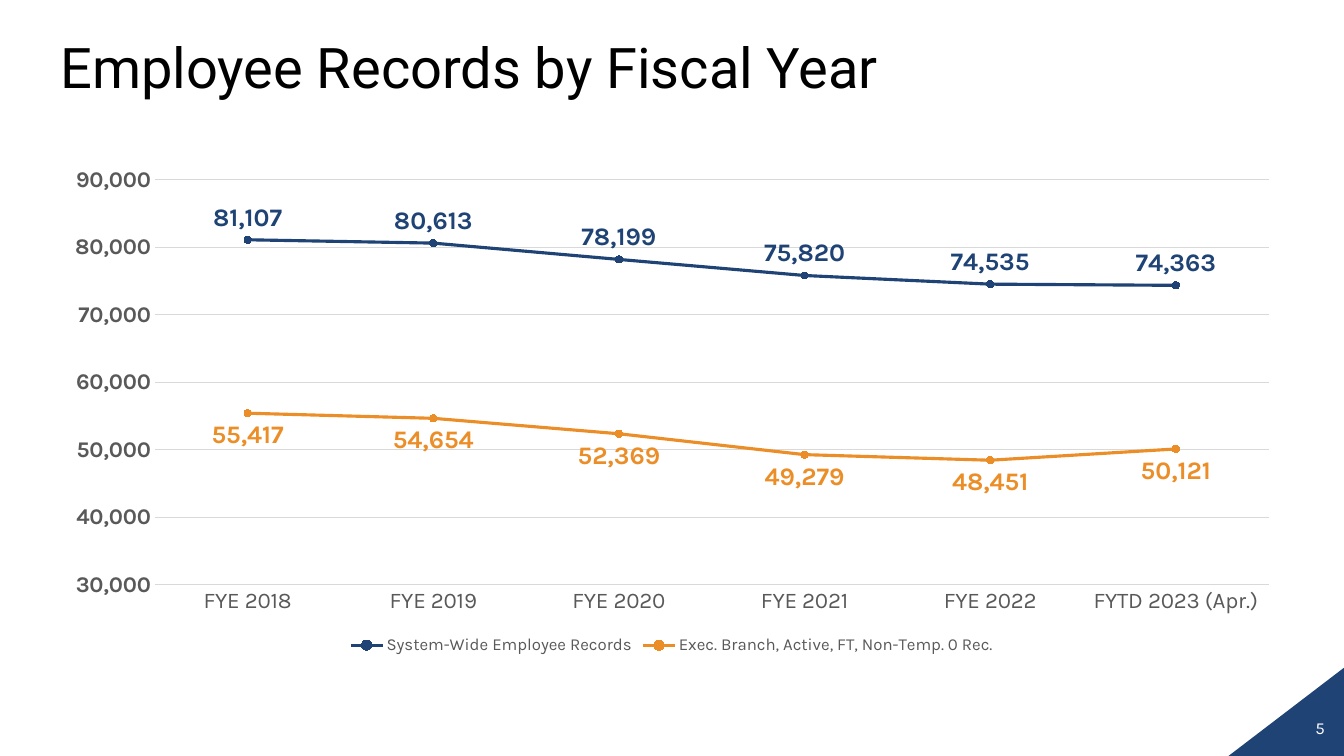
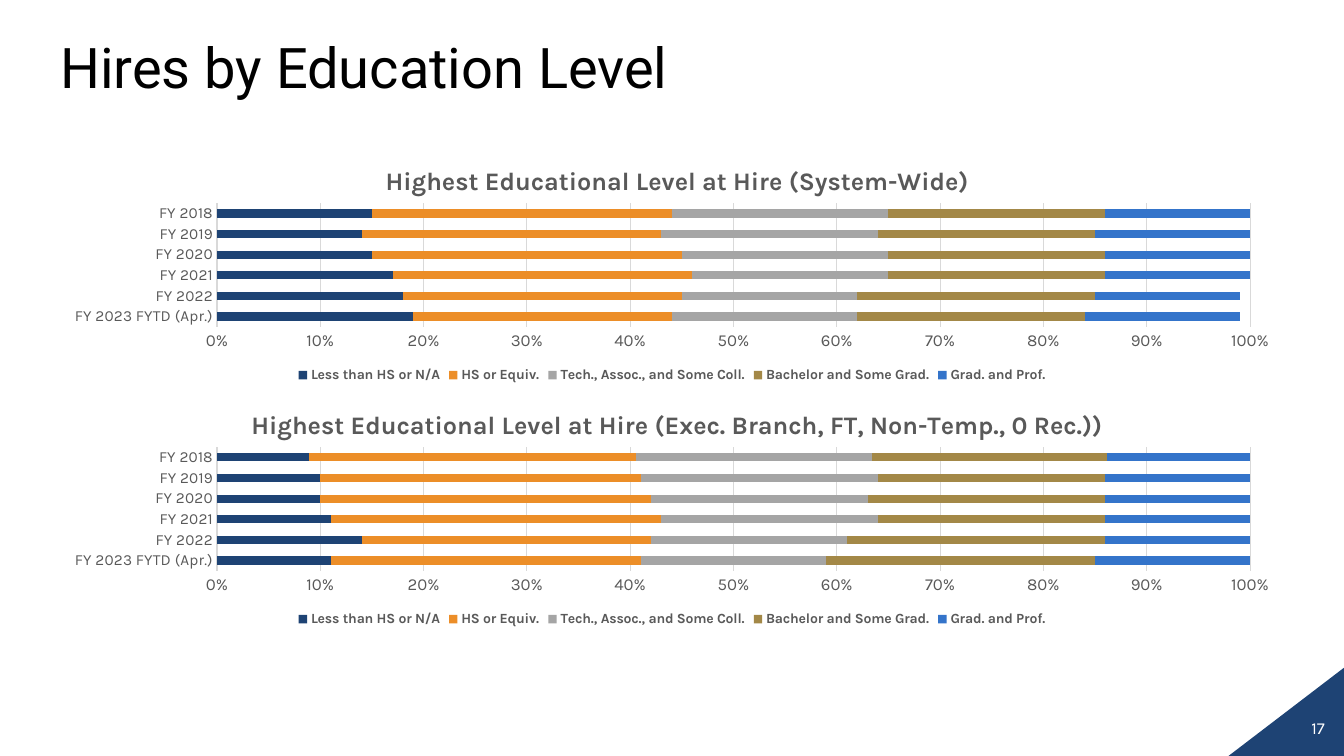
from dataclasses import dataclass
from typing import Any, Optional

from lxml import etree
from pptx import Presentation
from pptx.chart.chart import Chart
from pptx.chart.data import CategoryChartData
from pptx.dml.color import RGBColor
from pptx.enum.chart import (
    XL_CHART_TYPE, XL_LABEL_POSITION, XL_LEGEND_POSITION, XL_MARKER_STYLE, XL_TICK_MARK,
)
from pptx.enum.shapes import MSO_SHAPE
from pptx.enum.text import MSO_ANCHOR, PP_ALIGN
from pptx.oxml.ns import qn
from pptx.util import Inches, Pt

LINE, STACKED, STACKED_100 = (
    XL_CHART_TYPE.LINE_MARKERS, XL_CHART_TYPE.BAR_STACKED, XL_CHART_TYPE.BAR_STACKED_100)
ABOVE, BELOW = XL_LABEL_POSITION.ABOVE, XL_LABEL_POSITION.BELOW
LEGEND_BOTTOM, CIRCLE, NO_TICK = (
    XL_LEGEND_POSITION.BOTTOM, XL_MARKER_STYLE.CIRCLE, XL_TICK_MARK.NONE)
TRIANGLE = MSO_SHAPE.RIGHT_TRIANGLE
TOP, MIDDLE = MSO_ANCHOR.TOP, MSO_ANCHOR.MIDDLE
LEFT, RIGHT = PP_ALIGN.LEFT, PP_ALIGN.RIGHT

COLUMNS, ROWS = 160, 90
CELL = Inches(7.5) / ROWS
COLORS = {
    "navy": "1E4374", "orange": "EC8E28", "gray": "A5A5A5", "olive": "A38847",
    "blue": "3474CA", "label": "595959", "grid": "D9D9D9", "black": "000000",
    "white": "FFFFFF",
}
TITLE_FONT, BODY_FONT = "Roboto", "Karla"


@dataclass(frozen=True)
class Area:
    """A rectangle in grid columns and rows."""
    column: float
    row: float
    columns: float
    rows: float

    def lengths(self) -> list[int]:
        """Return left, top, width and height."""
        return [round(n * CELL) for n in (self.column, self.row, self.columns, self.rows)]


@dataclass(frozen=True)
class Series:
    """One named data series and its colour."""
    name: str
    color: str
    values: tuple[float, ...]
    label_position: Any = None


@dataclass(frozen=True)
class ChartStyle:
    """The format that charts of one kind share."""
    plot: tuple[float, float, float, float]
    category_size: int
    value_size: int
    legend_size: int
    number_format: str
    minimum: float
    maximum: float
    step: float
    bold_values: bool = False
    bold_legend: bool = False


@dataclass(frozen=True)
class ChartPanel:
    """A chart with its place, data and optional heading."""
    area: Area
    kind: Any
    style: ChartStyle
    categories: tuple[str, ...]
    series: tuple[Series, ...]
    heading: str = ""
    heading_at: Optional[tuple[float, float]] = None


@dataclass(frozen=True)
class Page:
    """The content of one slide."""
    title: str
    number: int
    panels: tuple[ChartPanel, ...]


TITLE_AREA = Area(6, 0.12, 148, 16.44)
CORNER_AREA = Area(146.25, 79.5, 13.75, 10.5)
NUMBER_AREA = Area(145.1, 84.84, 13.8, 5.16)
TREND_STYLE = ChartStyle((0.084, 0.045, 0.896, 0.807), 16, 16, 12, "#,##0",
                         30000, 90000, 10000, bold_values=True)
SHARE_STYLE = ChartStyle((0.134, 0.246, 0.831, 0.508), 11, 12, 10, "0%",
                         0, 1, 0.1, bold_legend=True)
HIRE_YEARS = ("FY 2023 FYTD (Apr.)", "FY 2022", "FY 2021", "FY 2020", "FY 2019", "FY 2018")
LEVELS = (
    ("Less than HS or N/A", "navy"), ("HS or Equiv.", "orange"),
    ("Tech., Assoc., and Some Coll.", "gray"), ("Bachelor and Some Grad.", "olive"),
    ("Grad. and Prof.", "blue"),
)
SYSTEM_SHARES = (
    (0.19, 0.18, 0.17, 0.15, 0.14, 0.15),
    (0.25, 0.27, 0.29, 0.3, 0.29, 0.29),
    (0.18, 0.17, 0.19, 0.2, 0.21, 0.21),
    (0.22, 0.23, 0.21, 0.21, 0.21, 0.21),
    (0.15, 0.14, 0.14, 0.14, 0.15, 0.14),
)
BRANCH_SHARES = (
    (11, 14, 11, 10, 10, 9),
    (30, 28, 32, 32, 31, 32),
    (18, 19, 21, 21, 23, 23),
    (26, 25, 22, 23, 22, 23),
    (15, 14, 14, 14, 14, 14),
)


def rgb(name: str) -> RGBColor:
    """Return a colour of the palette."""
    return RGBColor.from_string(COLORS[name])


def format_font(font: Any, *, size: float, color: str = "label", bold: bool = False,
                name: str = BODY_FONT) -> None:
    """Set typeface, size, weight and colour."""
    font.name, font.size, font.bold = name, Pt(size), bold
    font.color.rgb = rgb(color)


def format_line(line: Any, color: str, width: float) -> None:
    """Set the colour and width of a line."""
    line.color.rgb = rgb(color)
    line.width = Pt(width)


def add_text(slide: Any, area: Area, text: str, *, size: float, color: str, name: str = BODY_FONT,
             align: Any = LEFT, anchor: Any = TOP, spacing: float = 1.0) -> None:
    """Add a wrapped box with one paragraph."""
    frame = slide.shapes.add_textbox(*area.lengths()).text_frame
    frame.word_wrap = True
    frame.vertical_anchor = anchor
    para = frame.paragraphs[0]
    para.alignment, para.line_spacing = align, spacing
    span = para.add_run()
    span.text = text
    format_font(span.font, size=size, color=color, name=name)


def add_corner(slide: Any) -> None:
    """Add the triangle in the lower right corner."""
    corner = slide.shapes.add_shape(TRIANGLE, *CORNER_AREA.lengths())
    corner.shadow.inherit = False
    corner.fill.solid()
    corner.fill.fore_color.rgb = rgb("navy")
    corner.line.fill.background()
    corner.element.spPr.find(qn("a:xfrm")).set("flipH", "1")


def set_layout(parent: Any, index: int, shares: tuple[float, ...], inner: bool = False) -> None:
    """Place a chart part by shares of the chart's size."""
    for old in parent.findall(qn("c:layout")):
        parent.remove(old)
    layout = etree.Element(qn("c:layout"))
    manual = etree.SubElement(layout, qn("c:manualLayout"))
    settings = [("layoutTarget", "inner")] if inner else []
    settings += [("xMode", "edge"), ("yMode", "edge")]
    settings += [(key, str(share)) for key, share in zip("xywh", shares)]
    for tag, value in settings:
        etree.SubElement(manual, qn(f"c:{tag}")).set("val", value)
    parent.insert(index, layout)


def format_axes(chart: Chart, style: ChartStyle) -> None:
    """Format both axes and the gridlines."""
    category, value = chart.category_axis, chart.value_axis
    for axis in (category, value):
        axis.major_tick_mark = axis.minor_tick_mark = NO_TICK
    format_font(category.tick_labels.font, size=style.category_size)
    format_line(category.format.line, "grid", 0.75)
    category.has_major_gridlines = False
    format_font(value.tick_labels.font, size=style.value_size, bold=style.bold_values)
    value.format.line.fill.background()
    value.has_major_gridlines = True
    format_line(value.major_gridlines.format.line, "grid", 0.75)
    value.minimum_scale, value.maximum_scale = style.minimum, style.maximum
    value.major_unit = style.step
    value.tick_labels.number_format = style.number_format
    value.tick_labels.number_format_is_linked = False


def format_trend(drawn: Any, series: Series, number_format: str) -> None:
    """Format a line with its markers and labels."""
    drawn.smooth = False
    format_line(drawn.format.line, series.color, 2.25)
    drawn.marker.style, drawn.marker.size = CIRCLE, 5
    drawn.marker.format.fill.solid()
    drawn.marker.format.fill.fore_color.rgb = rgb(series.color)
    format_line(drawn.marker.format.line, series.color, 0.75)
    labels = drawn.data_labels
    labels.show_value = True
    labels.position = series.label_position
    labels.number_format, labels.number_format_is_linked = number_format, False
    format_font(labels.font, size=18, color=series.color, bold=True)


def add_panel(slide: Any, panel: ChartPanel) -> None:
    """Add a chart with its heading, legend and series."""
    style = panel.style
    data = CategoryChartData()
    data.categories = panel.categories
    for series in panel.series:
        data.add_series(series.name, series.values)
    chart = slide.shapes.add_chart(panel.kind, *panel.area.lengths(), data).chart
    format_font(chart.font, size=10, color="black")
    chart.has_title = bool(panel.heading)
    if panel.heading:
        para = chart.chart_title.text_frame.paragraphs[0]
        span = para.add_run()
        span.text = panel.heading
        format_font(span.font, size=18, bold=True)
        set_layout(chart.chart_title.element, 1, panel.heading_at)
    chart.has_legend = True
    chart.legend.position = LEGEND_BOTTOM
    chart.legend.include_in_layout = False
    format_font(chart.legend.font, size=style.legend_size, bold=style.bold_legend)
    format_axes(chart, style)
    set_layout(chart.element.find(".//" + qn("c:plotArea")), 0, style.plot, inner=True)
    plot = chart.plots[0]
    plot.vary_by_categories = False
    if panel.kind != LINE:
        plot.gap_width, plot.overlap = 150, 100
    for drawn, series in zip(plot.series, panel.series):
        if panel.kind == LINE:
            format_trend(drawn, series, style.number_format)
        else:
            drawn.format.fill.solid()
            drawn.format.fill.fore_color.rgb = rgb(series.color)


def hire_panel(position: int, kind: Any, group: str, heading_left: float,
               shares: tuple[tuple[float, ...], ...]) -> ChartPanel:
    """Describe one of the stacked education charts."""
    series = tuple(Series(*level, values) for level, values in zip(LEVELS, shares))
    return ChartPanel(Area(6, 17.04 + 29.04 * position, 148, 29.04), kind, SHARE_STYLE,
                      HIRE_YEARS, series, f"Highest Educational Level at Hire ({group})",
                      (heading_left, 0.07))


def add_page(deck: Any, page: Page) -> None:
    """Add a slide with its shared parts and charts."""
    slide = deck.slides.add_slide(deck.slide_layouts[6])
    add_corner(slide)
    add_text(slide, TITLE_AREA, page.title, size=40, color="black", name=TITLE_FONT,
             anchor=MIDDLE, spacing=0.9)
    add_text(slide, NUMBER_AREA, str(page.number), size=12, color="white", align=RIGHT)
    for panel in page.panels:
        add_panel(slide, panel)


PAGES = (
    Page("Employee Records by Fiscal Year", 5, (
        ChartPanel(
            Area(6, 18.72, 148, 59.76), LINE, TREND_STYLE,
            (*(f"FYE {year}" for year in range(2018, 2023)), "FYTD 2023 (Apr.)"),
            (Series("System-Wide Employee Records", "navy",
                    (81107, 80613, 78199, 75820, 74535, 74363), ABOVE),
             Series("Exec. Branch, Active, FT, Non-Temp. 0 Rec.", "orange",
                    (55417, 54654, 52369, 49279, 48451, 50121), BELOW))),
    )),
    Page("Hires by Education Level", 17, (
        hire_panel(0, STACKED, "System-Wide", 0.266, SYSTEM_SHARES),
        hire_panel(1, STACKED_100, "Exec. Branch, FT, Non-Temp., 0 Rec.)", 0.158, BRANCH_SHARES),
    )),
)


def main() -> None:
    """Build and save the deck."""
    deck = Presentation()
    deck.slide_width, deck.slide_height = round(COLUMNS * CELL), round(ROWS * CELL)
    for page in PAGES:
        add_page(deck, page)
    deck.save("out.pptx")


if __name__ == "__main__":
    main()
